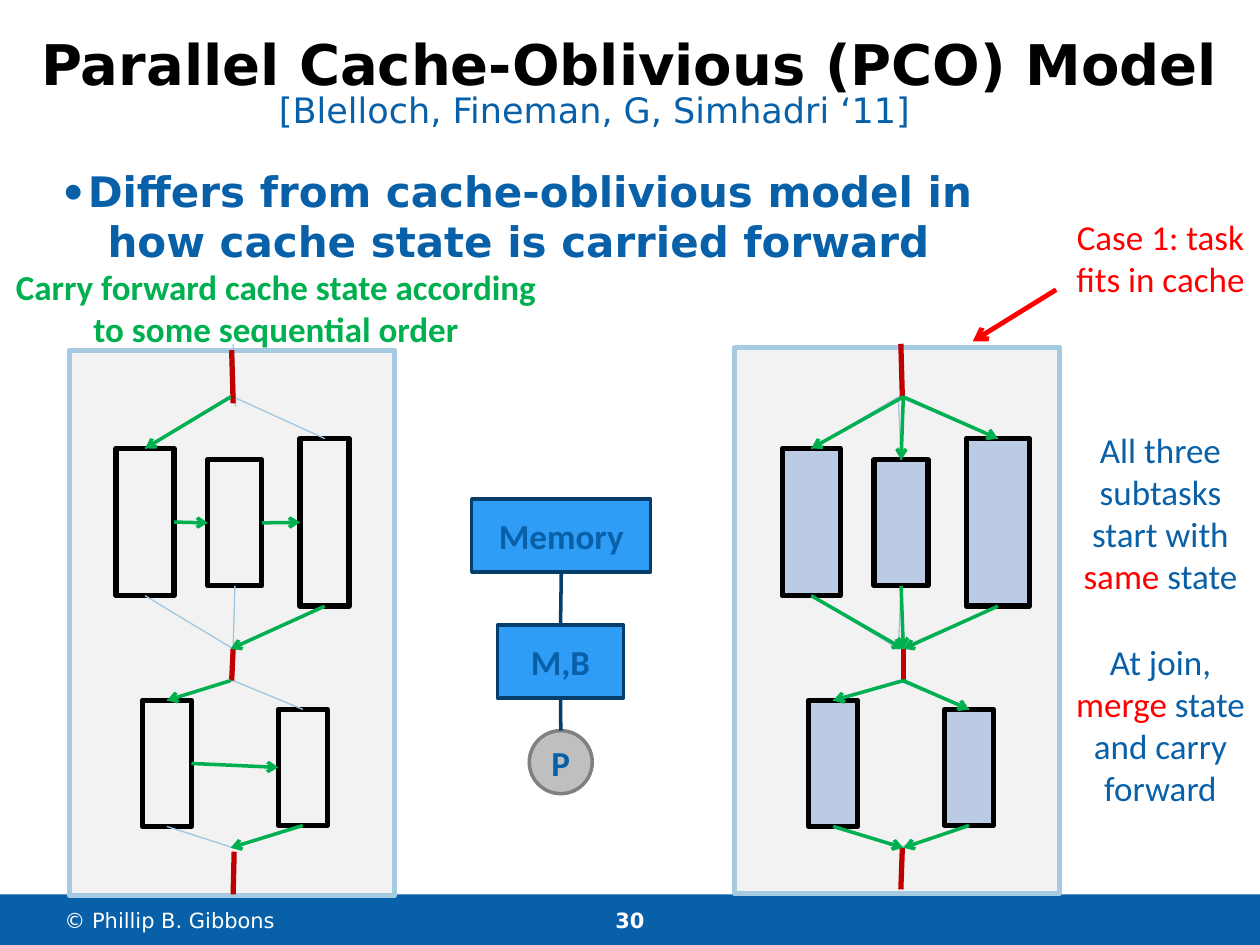
from lxml import etree
from pptx import Presentation
from pptx.dml.color import RGBColor
from pptx.enum.shapes import MSO_CONNECTOR as Connector, MSO_SHAPE as Shape
from pptx.enum.text import MSO_ANCHOR as Anchor, PP_ALIGN as Align
from pptx.oxml.ns import qn
from pptx.util import Cm, Pt

BLUE = RGBColor(0x08, 0x60, 0xA8)
BRIGHT_BLUE = RGBColor(0x2F, 0x9C, 0xF6)
NAVY = RGBColor(0x05, 0x3D, 0x6B)
PALE_BLUE = RGBColor(0xA6, 0xCA, 0xE1)
THIN_BLUE = RGBColor(0xA1, 0xC6, 0xDD)
TASK_BLUE = RGBColor(0xBB, 0xCB, 0xE3)
LIGHT_GRAY = RGBColor(0xF2, 0xF2, 0xF2)
SILVER = RGBColor(0xBF, 0xBF, 0xBF)
GRAY = RGBColor(0x80, 0x80, 0x80)
BLACK = RGBColor(0, 0, 0)
WHITE = RGBColor(0xFF, 0xFF, 0xFF)
RED = RGBColor(0xFF, 0, 0)
DARK_RED = RGBColor(0xC0, 0, 0)
GREEN = RGBColor(0, 0xB0, 0x50)
SANS = "DejaVu Sans"
TOP, LEFT, BOTTOM, RIGHT = range(4)

presentation = Presentation()
presentation.slide_width, presentation.slide_height = Cm(25.4), Cm(19.05)
slide = presentation.slides.add_slide(presentation.slide_layouts[6])


def add_text(shape, text, size=20, color=BLUE, font="Calibri", bold=False, align=Align.CENTER,
             anchor=Anchor.TOP, wrap=True, inset=True, highlight=""):
    """Fill the shape with text, showing the highlight word in red."""
    frame = shape.text_frame
    frame.word_wrap, frame.vertical_anchor = wrap, anchor
    if not inset:
        frame.margin_left = frame.margin_top = frame.margin_right = frame.margin_bottom = 0
    for index, line in enumerate(text.split("\n")):
        paragraph = frame.add_paragraph() if index else frame.paragraphs[0]
        paragraph.alignment = align
        for part in line.partition(highlight) if highlight else [line]:
            run = paragraph.add_run()
            run.text = part
            run.font.size, run.font.name, run.font.bold = Pt(size), font, bold
            run.font.color.rgb = RED if part == highlight else color


def add_line(start, end, color, width, arrow=False):
    """Draw a line; each end is an (x, y) point in cm or a (shape, side) pair."""
    joins = [hasattr(place[0], "shape_id") for place in (start, end)]
    points = [(0, 0) if joined else place for joined, place in zip(joins, (start, end))]
    line = slide.shapes.add_connector(
        Connector.STRAIGHT, *[Cm(value) for point in points for value in point])
    if joins[0]:
        line.begin_connect(*start)
    if joins[1]:
        line.end_connect(*end)
    line.line.color.rgb, line.line.width = color, Pt(width)
    if arrow:
        etree.SubElement(line.line._get_or_add_ln(), qn("a:tailEnd"), type="arrow")
    etree.SubElement(line._element.spPr, qn("a:effectLst"))


# Boxes: kind, place, fill, line colour, line width
panel_shift = 13.43
left_tasks = [(2.34, 9.04, 1.17, 2.97), (4.19, 9.27, 1.09, 2.54), (6.05, 8.84, 0.99, 3.38),
              (2.87, 14.12, 0.99, 2.54), (5.61, 14.3, 0.99, 2.34)]
right_tasks = [(x + panel_shift, y, 1.27 if index == 2 else width, height)
               for index, (x, y, width, height) in enumerate(left_tasks)]
boxes = [
    (Shape.RECTANGLE, (0, 18.03, 25.4, 1.02), BLUE, None, 0),
    (Shape.RECTANGLE, (1.4, 7.06, 6.55, 11), LIGHT_GRAY, PALE_BLUE, 3),
    (Shape.RECTANGLE, (14.81, 7.01, 6.55, 11), LIGHT_GRAY, PALE_BLUE, 3),
    (Shape.RECTANGLE, (9.51, 10.06, 3.61, 1.47), BRIGHT_BLUE, NAVY, 2),
    (Shape.RECTANGLE, (10.03, 12.6, 2.54, 1.47), BRIGHT_BLUE, NAVY, 2),
    (Shape.OVAL, (10.67, 14.73, 1.27, 1.27), SILVER, GRAY, 2),
]
boxes += [(Shape.RECTANGLE, place, None, BLACK, 3) for place in left_tasks]
boxes += [(Shape.RECTANGLE, place, TASK_BLUE, BLACK, 3) for place in right_tasks]
shapes = []
for kind, place, fill, line_color, line_width in boxes:
    shape = slide.shapes.add_shape(kind, *map(Cm, place))
    shape.shadow.inherit = False
    if fill is None:
        shape.fill.background()
    else:
        shape.fill.solid()
        shape.fill.fore_color.rgb = fill
    if line_color is None:
        shape.line.fill.background()
    else:
        shape.line.color.rgb, shape.line.width = line_color, Pt(line_width)
    shapes.append(shape)
footer, _, _, memory, cache, processor = shapes[:6]
left, right = shapes[6:11], shapes[11:]

add_text(footer, "30", size=12, color=WHITE, font=SANS, bold=True, anchor=Anchor.MIDDLE)
for shape, label in [(memory, "Memory"), (cache, "M,B"), (processor, "P")]:
    add_text(shape, label, bold=True, anchor=Anchor.MIDDLE, wrap=False)
add_line((memory, BOTTOM), (cache, TOP), NAVY, 2)
add_line((processor, TOP), (cache, BOTTOM), NAVY, 2)

# Task graphs: forks and joins at these heights
fork, join, second_fork, second_join = 8, 13.08, 13.72, 17.09
stages = [(slice(0, 3), fork, join), (slice(3, 5), second_fork, second_join)]
for tasks, x in [(left, 4.7), (right, 18.11)]:
    for members, fork_y, join_y in stages:
        for task in tasks[members]:
            if task is left[1]:
                add_line((4.75, 8.2), (x, 6.93), THIN_BLUE, 0.75)
            else:
                add_line((task, TOP), (x, fork_y), THIN_BLUE, 0.75)
            add_line((task, BOTTOM), (x, join_y), THIN_BLUE, 0.75)

for start, end in [
    ((4.67, 7.06), (4.7, 8.13)), ((4.7, join), (4.67, second_fork)), ((4.72, 17.17), (4.7, 18.03)),
    ((18.16, 6.93), (18.19, fork)), ((18.21, join), (18.21, second_fork)),
    ((18.19, second_join), (18.16, 17.93)),
]:
    add_line(start, end, DARK_RED, 3)

# The left graph visits its tasks in order, the right one runs them in parallel
for members, fork_y, join_y in stages:
    ordered = left[members]
    add_line((4.65, fork_y), (ordered[0], TOP), GREEN, 2, arrow=True)
    for task, following in zip(ordered, ordered[1:]):
        add_line((task, RIGHT), (following, LEFT), GREEN, 2, arrow=True)
    add_line((ordered[-1], BOTTOM), (4.65, join_y), GREEN, 2, arrow=True)
    for task in right[members]:
        add_line((18.21, fork_y), (task, TOP), GREEN, 2, arrow=True)
        add_line((task, BOTTOM), (18.21, join_y), GREEN, 2, arrow=True)

add_line((21.29, 5.84), (19.61, 6.88), RED, 2.75, arrow=True)

for place, text, style in [
    ((0, 0.6, 25.4, 2.46), "Parallel Cache-Oblivious (PCO) Model",
     dict(size=32, color=BLACK, font=SANS, bold=True, inset=False)),
    ((4.94, 1.65, 14.1, 1.12), "[Blelloch, Fineman, G, Simhadri ‘11]", dict(font=SANS, wrap=False)),
    ((1.3, 18.24, 6.02, 0.61), "© Phillip B. Gibbons",
     dict(size=12, color=WHITE, font=SANS, align=Align.LEFT, anchor=Anchor.MIDDLE, inset=False)),
    ((-0.05, 5.23, 11.23, 1.96), "Carry forward cache state according to some sequential order",
     dict(color=GREEN, bold=True)),
    ((21.39, 4.22, 4.01, 1.96), "Case 1: task fits in cache", dict(color=RED)),
    ((21.39, 8.51, 4.01, 3.68), "All three subtasks start with same state", dict(highlight="same")),
    ((21.39, 12.78, 4.01, 3.68), "At join, merge state and carry forward", dict(highlight="merge")),
]:
    add_text(slide.shapes.add_textbox(*map(Cm, place)), text, **style)

# Bulleted statement with a deeper second line
statement = slide.shapes.add_textbox(Cm(1.27), Cm(3.33), Cm(22.86), Cm(2.74))
add_text(statement, "Differs from cache-oblivious model in\nhow cache state is carried forward",
         size=24, font=SANS, bold=True, align=Align.LEFT, inset=False)
first, second = [paragraph._p.get_or_add_pPr() for paragraph in statement.text_frame.paragraphs]
first.set("marL", str(Cm(0.5)))
first.set("indent", str(-Cm(0.5)))
etree.SubElement(first, qn("a:buFont"), typeface="Calibri")
etree.SubElement(first, qn("a:buChar"), char="•")
second.set("marL", str(Cm(0.9)))

presentation.save("out.pptx")
